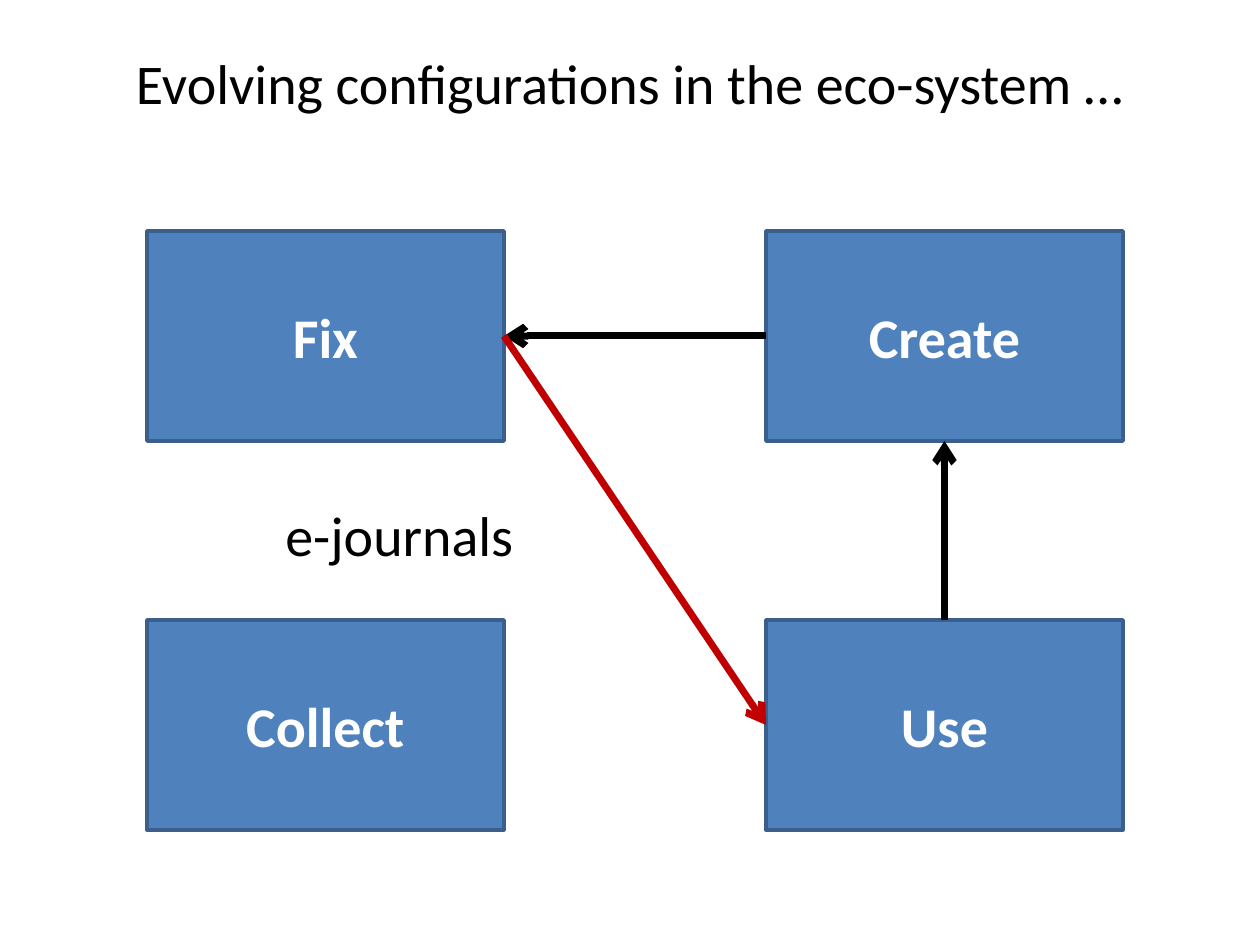
import pptx
import pptx.dml.color
import pptx.enum.shapes
import pptx.enum.text
import pptx.util
from pptx.oxml import parse_xml
from pptx.oxml.ns import nsdecls

RGBColor = pptx.dml.color.RGBColor
BLACK = RGBColor(0x00, 0x00, 0x00)
WHITE = RGBColor(0xFF, 0xFF, 0xFF)
BLUE = RGBColor(0x4F, 0x81, 0xBD)
DARK_BLUE = RGBColor(0x3A, 0x5F, 0x8C)
RED = RGBColor(0xC0, 0x00, 0x00)

TOP, LEFT, BOTTOM, RIGHT = range(4)  # connection sites of a rectangle
PX = pptx.util.Inches(1) / 126

# Content
TITLE = "Evolving configurations in the eco-system …"
LABEL = "e-journals"
STAGES = [("Create", 1, 0), ("Use", 1, 1), ("Collect", 0, 1), ("Fix", 0, 0)]  # column, row
ARROWS = [
    ("Create", LEFT, "Fix", RIGHT, BLACK),
    ("Use", TOP, "Create", BOTTOM, BLACK),
    ("Fix", RIGHT, "Use", LEFT, RED),
]

# Layout in px
GRID_LEFT, GRID_TOP = 147, 231
BOX_WIDTH, BOX_HEIGHT = 357, 210
COLUMN_STEP, ROW_STEP = 619, 389


def emu(*lengths):
    return [round(length * PX) for length in lengths]


def write(shape, text, color, alignment, bold=False):
    text_frame = shape.text_frame
    text_frame.text = text
    text_frame.vertical_anchor = pptx.enum.text.MSO_ANCHOR.MIDDLE
    paragraph = text_frame.paragraphs[0]
    paragraph.alignment = alignment
    font = paragraph.runs[0].font
    font.name = "Calibri"
    font.size = pptx.util.Pt(32)
    font.bold = bold
    font.color.rgb = color


def add_stage(slide, name, column, row):
    left = GRID_LEFT + column * COLUMN_STEP
    top = GRID_TOP + row * ROW_STEP
    shape = slide.shapes.add_shape(
        pptx.enum.shapes.MSO_SHAPE.RECTANGLE, *emu(left, top, BOX_WIDTH, BOX_HEIGHT))
    shape.shadow.inherit = False
    shape.fill.solid()
    shape.fill.fore_color.rgb = BLUE
    shape.line.color.rgb = DARK_BLUE
    shape.line.width = pptx.util.Pt(2)
    write(shape, name, WHITE, pptx.enum.text.PP_ALIGN.CENTER, bold=True)
    return shape


def add_arrow(slide, start, start_site, end, end_site, color):
    connector = slide.shapes.add_connector(
        pptx.enum.shapes.MSO_CONNECTOR.STRAIGHT, 0, 0, 0, 0)
    connector.begin_connect(start, start_site)
    connector.end_connect(end, end_site)
    connector.line.color.rgb = color
    connector.line.width = pptx.util.Pt(4)
    connector.line._get_or_add_ln().append(
        parse_xml(f'<a:tailEnd {nsdecls("a")} type="arrow"/>'))
    connector._element.spPr.append(parse_xml(f'<a:effectLst {nsdecls("a")}/>'))


def main():
    presentation = pptx.Presentation()
    presentation.slide_width, presentation.slide_height = emu(1260, 945)
    slide = presentation.slides.add_slide(presentation.slide_layouts[6])

    # Title
    title = slide.shapes.add_textbox(*emu(63, 38, 1134, 88))
    title.text_frame.word_wrap = True
    write(title, TITLE, BLACK, pptx.enum.text.PP_ALIGN.CENTER)

    # Stages and the arrows between them
    stages = {name: add_stage(slide, name, column, row) for name, column, row in STAGES}
    for start, start_site, end, end_site, color in ARROWS:
        add_arrow(slide, stages[start], start_site, stages[end], end_site, color)

    # Label
    label = slide.shapes.add_textbox(*emu(273, 494, 256, 81))
    label.text_frame.word_wrap = False
    label.text_frame.auto_size = pptx.enum.text.MSO_AUTO_SIZE.SHAPE_TO_FIT_TEXT
    write(label, LABEL, BLACK, pptx.enum.text.PP_ALIGN.LEFT)

    presentation.save("out.pptx")


if __name__ == "__main__":
    main()
